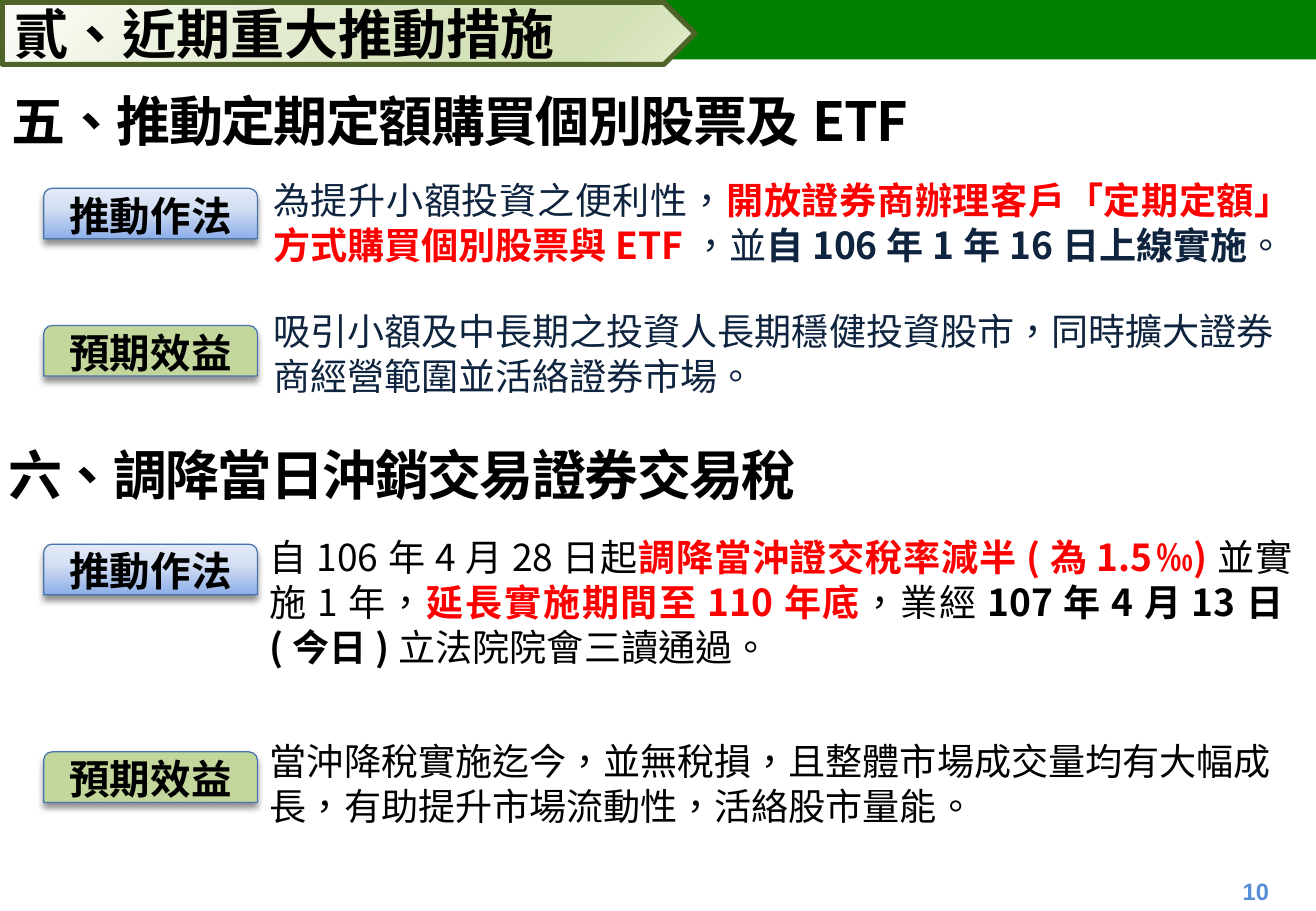
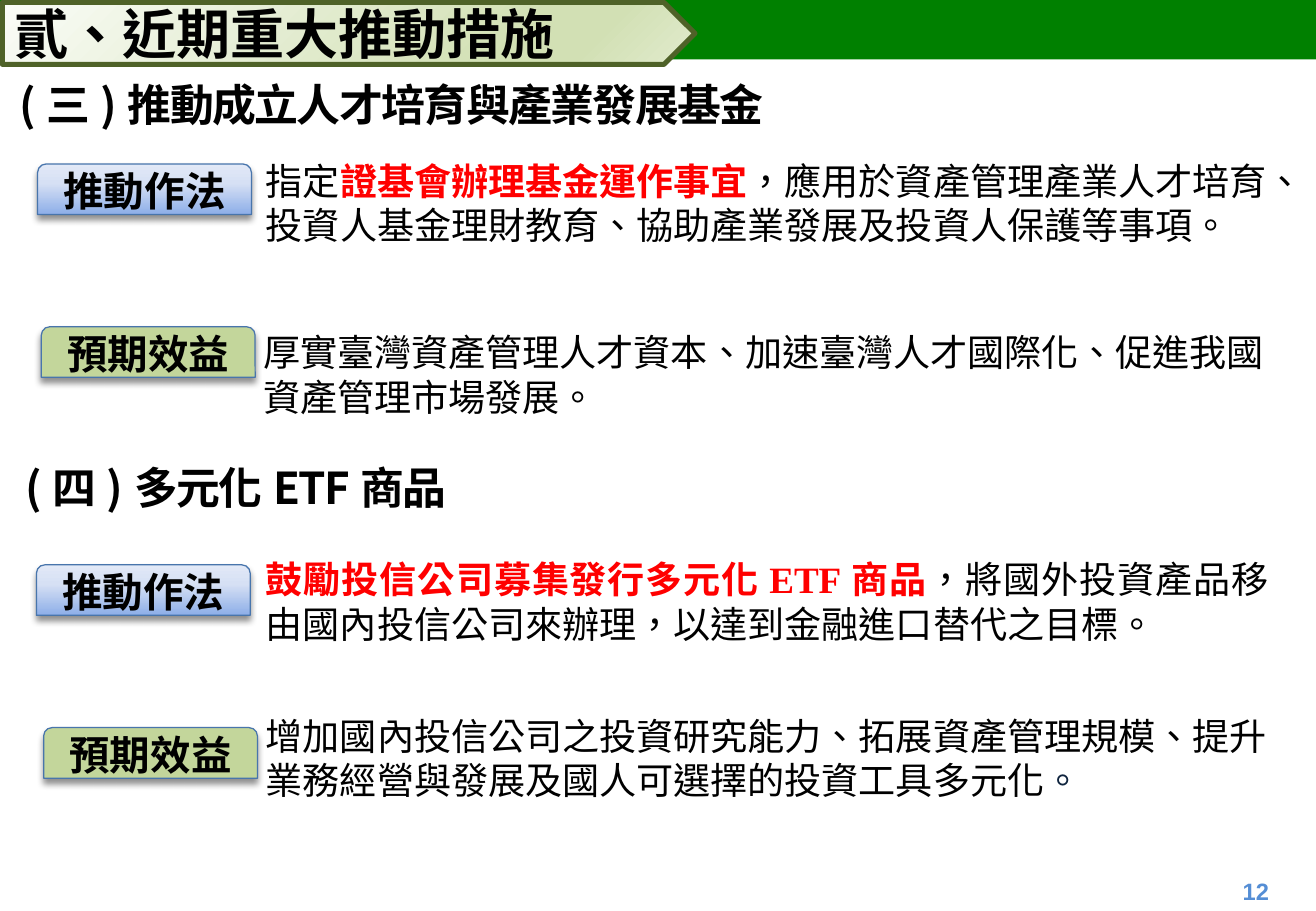
"""Build two slides on recent market measures and their expected benefits."""
from lxml.etree import SubElement
from pptx import Presentation
from pptx.dml.color import RGBColor
from pptx.enum.shapes import MSO_SHAPE
from pptx.enum.text import MSO_ANCHOR, PP_ALIGN
from pptx.oxml.ns import qn
from pptx.util import Inches, Pt

BLACK = RGBColor(0x00, 0x00, 0x00)
RED = RGBColor(0xFF, 0x00, 0x00)
NAVY = RGBColor(0x0F, 0x24, 0x3E)
GREEN = RGBColor(0x00, 0x80, 0x00)
OLIVE = RGBColor(0x4F, 0x62, 0x28)
LEAF = RGBColor(0xC3, 0xD6, 0x9B)
STEEL = RGBColor(0x48, 0x75, 0xAC)
PAGE_BLUE = RGBColor(0x55, 0x8E, 0xD5)
BANNER_STOPS = [(0, RGBColor(0xFA, 0xFC, 0xF7)), (74, RGBColor(0xD2, 0xE0, 0xB4)),
                (83, RGBColor(0xD2, 0xE0, 0xB4)), (100, RGBColor(0xE1, 0xEB, 0xCD))]
BADGE_STOPS = [(0, RGBColor(0x8D, 0xAE, 0xE8)), (62, RGBColor(0xD6, 0xE0, 0xF4)),
               (100, RGBColor(0xE2, 0xE9, 0xF7))]
SANS, SERIF, PAGE_FONT = "Noto Sans CJK SC", "Times New Roman", "Arial"
LEFT, JUSTIFY, CENTER = PP_ALIGN.LEFT, PP_ALIGN.JUSTIFY, PP_ALIGN.CENTER

presentation = Presentation()
presentation.slide_width = Inches(10.83)
presentation.slide_height = Inches(7.5)
COLUMN = presentation.slide_width / 100
ROW = presentation.slide_height / 100


def add_box(slide, column, row, columns, rows, preset=None):
    """Add a text box or preset shape placed on a grid of 100 columns and 100 rows."""
    place = [int(column * COLUMN), int(row * ROW), int(columns * COLUMN), int(rows * ROW)]
    if preset is None:
        shape = slide.shapes.add_textbox(*place)
    else:
        shape = slide.shapes.add_shape(preset, *place)
        shape.shadow.inherit = False
    shape.text_frame.word_wrap = True
    shape.text_frame.vertical_anchor = MSO_ANCHOR.MIDDLE
    return shape


def write(shape, runs, size, color=BLACK, bold=True, name=SANS, alignment=LEFT, spacing=0):
    """Write one paragraph from (text, color, bold, size) runs that may stop early."""
    paragraph = shape.text_frame.paragraphs[0]
    paragraph.alignment = alignment
    font = paragraph.font
    font.size, font.bold, font.name = Pt(size), bold, name
    font.color.rgb = color
    SubElement(paragraph._p.pPr.find(qn("a:defRPr")), qn("a:ea")).set("typeface", SANS)
    for text, *style in runs:
        run = paragraph.add_run()
        run.text = text
        properties = run._r.get_or_add_rPr()
        properties.set("lang", "zh-TW")
        if spacing:
            properties.set("spc", str(spacing))
        if style:
            run.font.color.rgb = style[0]
            run.font.bold = style[1]
        if len(style) > 2:
            run.font.size = Pt(style[2])
    return paragraph


PAGES = [
    {
        "number": "10",
        "heading_size": 32,
        "headings": [(0, 9.2, "五、推動定期定額購買個別股票及ETF"),
                     (-0.28, 48.13, "六、調降當日沖銷交易證券交易稅")],
        "badges": [(3.32, 20.67), (3.32, 35.73), (3.32, 59.73), (3.32, 82.53)],
        "bodies": [
            (19.85, 18.53, 99.1, JUSTIFY, SANS, NAVY, [
                ("為提升小額投資之便利性，",),
                ("開放證券商辦理客戶「定期定額」方式購買個別股票與ETF", RED, True),
                ("，並",), ("自106年1年16日上線實施", NAVY, True), ("。",)]),
            (19.85, 32.93, 99.1, LEFT, SERIF, NAVY, [
                ("吸引小額及中長期之投資人長期穩健投資股市，同時擴大證券商經營範圍並活絡證券市場。",)]),
            (19.6, 57.73, 99.1, JUSTIFY, SANS, BLACK, [
                ("自106年4月28日起",), ("調降當沖證交稅率減半(為1.5", RED, True),
                (" ", RED, True, 8), ("‰)", RED, True), ("並實施1年，",),
                ("延長實施期間至110年底", RED, True), ("，業經",),
                ("107年4月13日(今日)", BLACK, True), ("立法院院會三讀通過。",)]),
            (19.6, 80.13, 99.5, LEFT, SERIF, BLACK, [
                ("當沖降稅實施迄今，並無稅損，且整體市場成交量均有大幅成長，有助提升市場流動性，活絡股市量能。",)]),
        ],
    },
    {
        "number": "12",
        "heading_size": 26,
        "headings": [(0.55, 7.47, "(三)推動成立人才培育與產業發展基金"),
                     (1.02, 49.47, "(四)多元化ETF商品")],
        "badges": [(2.86, 18), (3.14, 35.87), (2.77, 62), (3.32, 79.87)],
        "bodies": [
            (19.3, 16.4, 100, LEFT, SERIF, BLACK, [
                ("指定",), ("證基會辦理基金運作事宜", RED, True),
                ("，應用於資產管理產業人才培育、投資人基金理財教育、協助產業發展及投資人保護等事項。",)]),
            (19.1, 35.2, 98.4, LEFT, SERIF, BLACK, [
                ("厚實臺灣資產管理人才資本、加速臺灣人才國際化、促進我國資產管理市場發展。",)]),
            (19.3, 60.13, 97.3, JUSTIFY, SERIF, BLACK, [
                ("鼓勵投信公司募集發行多元化ETF商品", RED, True),
                ("，將國外投資產品移由國內投信公司來辦理，以達到金融進口替代之目標。",)]),
            (19.3, 77.33, 98.2, LEFT, SANS, BLACK, [
                ("增加國內投信公司之投資研究能力、拓展資產管理規模、提升業務經營與發展及國人可選擇的投資工具多元化",),
                ("。", NAVY, False)]),
        ],
    },
]

for page in PAGES:
    slide = presentation.slides.add_slide(presentation.slide_layouts[6])

    band = add_box(slide, 0, 0, 100, 6.53, MSO_SHAPE.RECTANGLE)
    band.fill.solid()
    band.fill.fore_color.rgb = GREEN
    band.line.fill.background()

    banner = add_box(slide, 0.18, 0.27, 52.63, 6.8, MSO_SHAPE.PENTAGON)
    banner.line.color.rgb = OLIVE
    banner.line.width = Pt(3)
    write(banner, [("貳、近期重大推動措施",)], 32)
    gradients = [(banner, BANNER_STOPS, 315)]

    for column, row, text in page["headings"]:
        heading = add_box(slide, column, row, 98, 7.87)
        write(heading, [(text,)], page["heading_size"], spacing=-100)

    for column, row, right, alignment, name, color, runs in page["bodies"]:
        body = add_box(slide, column, row, right - column, 11.2)
        body.text_frame.vertical_anchor = MSO_ANCHOR.TOP
        body.text_frame.margin_top = Inches(0.07)
        paragraph = write(body, runs, 22, color, False, name, alignment)
        paragraph.line_spacing = Pt(26.5)

    for index, (column, row) in enumerate(page["badges"]):
        badge = add_box(slide, column, row, 16.25, 5.55, MSO_SHAPE.ROUND_2_SAME_RECTANGLE)
        badge.line.color.rgb = STEEL
        badge.line.width = Pt(0.75)
        if index % 2:
            badge.fill.solid()
            badge.fill.fore_color.rgb = LEAF
        else:
            gradients.append((badge, BADGE_STOPS, 90))
        write(badge, [(("推動作法", "預期效益")[index % 2],)], 24, alignment=CENTER)
        effects = badge._element.spPr.find(qn("a:effectLst"))
        shadow = SubElement(effects, qn("a:outerShdw"), blurRad=str(Pt(4)), dist=str(Pt(3)),
                            dir="5400000", rotWithShape="0")
        shade = SubElement(shadow, qn("a:srgbClr"), val=str(BLACK))
        SubElement(shade, qn("a:alpha"), val="43000")

    for shape, stops, angle in gradients:
        shape.fill.gradient()
        shape.fill.gradient_angle = angle
        stop_list = shape._element.spPr.find(qn("a:gradFill")).find(qn("a:gsLst"))
        for stop in list(stop_list):
            stop_list.remove(stop)
        for position, color in stops:
            stop = SubElement(stop_list, qn("a:gs"), pos=str(position * 1000))
            SubElement(stop, qn("a:srgbClr"), val=str(color))

    number = add_box(slide, 90.67, 95.6, 9.33, 4.4)
    number.text_frame.margin_right = Inches(0.08)
    write(number, [(page["number"],)], 14, PAGE_BLUE, name=PAGE_FONT, alignment=CENTER)

presentation.save("out.pptx")
